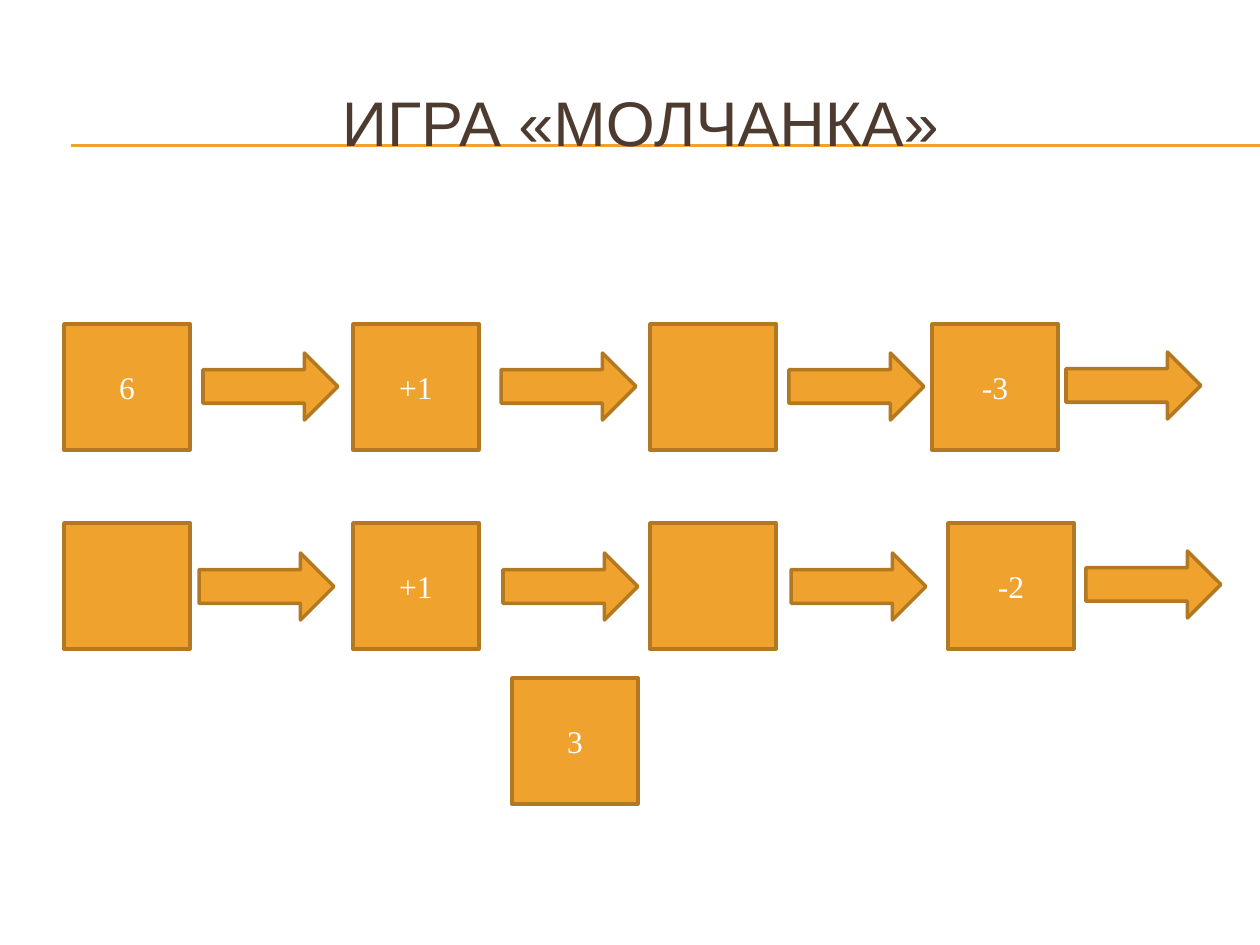
"""Builds the number-chain game slide."""
from dataclasses import dataclass

from lxml import etree
from pptx import Presentation
from pptx import util as u
from pptx.dml.color import RGBColor
from pptx.enum import shapes, text
from pptx.oxml.ns import qn

PX = 914400 / 126
AMBER, BROWN = "F0A22E", "B27822"
SQUARE = 126
ARROW = (135, 67)


@dataclass
class Step:
    """A square with its label and the arrow that follows it."""
    x: int
    label: str
    arrow_x: int
    arrow_drop: int


@dataclass
class Chain:
    """A row of steps sharing one top edge."""
    y: int
    steps: list[Step]


CHAINS = [
    Chain(324, [Step(64, "6", 203, 29), Step(353, "+1", 501, 29),
                Step(650, "", 789, 29), Step(932, "-3", 1066, 28)]),
    Chain(523, [Step(64, "", 199, 30), Step(353, "+1", 503, 30),
                Step(650, "", 791, 30), Step(948, "-2", 1086, 28)]),
]


def px(n: int) -> int:
    """Turn px into EMU."""
    return u.Emu(round(n * PX))


def rgb(value: str) -> RGBColor:
    """Turn a hex string into a colour."""
    return RGBColor.from_string(value)


def write(sp, label: str, font: str, size: int, color: str) -> None:
    """Put one centred line of text into a shape."""
    tf = sp.text_frame
    for name, value in {"word_wrap": True, "vertical_anchor": text.MSO_ANCHOR.MIDDLE}.items():
        setattr(tf, name, value)
    p = tf.paragraphs[0]
    p.alignment = text.PP_ALIGN.CENTER
    r = p.add_run()
    r.text = label
    for name, value in {"name": font, "size": u.Pt(size)}.items():
        setattr(r.font, name, value)
    r.font.color.rgb = rgb(color)


def add_block(s, kind, x: int, y: int, w: int, h: int, label: str = "") -> None:
    """Draw an outlined amber shape with an optional label."""
    sp = s.shapes.add_shape(kind, *map(px, (x, y, w, h)))
    sp.shadow.inherit = False
    sp.fill.solid()
    sp.fill.fore_color.rgb = rgb(AMBER)
    sp.line.color.rgb = rgb(BROWN)
    sp.line.width = u.Pt(2)
    if label:
        write(sp, label, "Times New Roman", 18, "FFFFFF")


def add_square(s, x: int, y: int, label: str) -> None:
    """Draw a number square."""
    add_block(s, shapes.MSO_SHAPE.RECTANGLE, x, y, SQUARE, SQUARE, label)


def add_rule(s, y: int) -> None:
    """Draw a thin rule running to the right edge."""
    line = s.shapes.add_connector(shapes.MSO_CONNECTOR.STRAIGHT, px(71), px(y), px(1260), px(y))
    line.line.color.rgb = rgb(AMBER)
    line.line.width = u.Pt(0.75)
    etree.SubElement(line._element.spPr, qn("a:effectLst"))


def main() -> None:
    """Build and save the slide."""
    prs = Presentation()
    prs.slide_width, prs.slide_height = px(1260), px(945)
    s = prs.slides.add_slide(prs.slide_layouts[6])
    for y in (145, 146):
        add_rule(s, y)
    title = s.shapes.add_textbox(*map(px, (42, 63, 1197, 116)))
    write(title, "ИГРА «МОЛЧАНКА»", "Arial", 36, "4E3B30")
    for chain in CHAINS:
        for step in chain.steps:
            add_square(s, step.x, chain.y, step.label)
            add_block(s, shapes.MSO_SHAPE.RIGHT_ARROW, step.arrow_x,
                      chain.y + step.arrow_drop, *ARROW)
    add_square(s, 512, 678, "3")
    prs.save("out.pptx")


if __name__ == "__main__":
    main()
